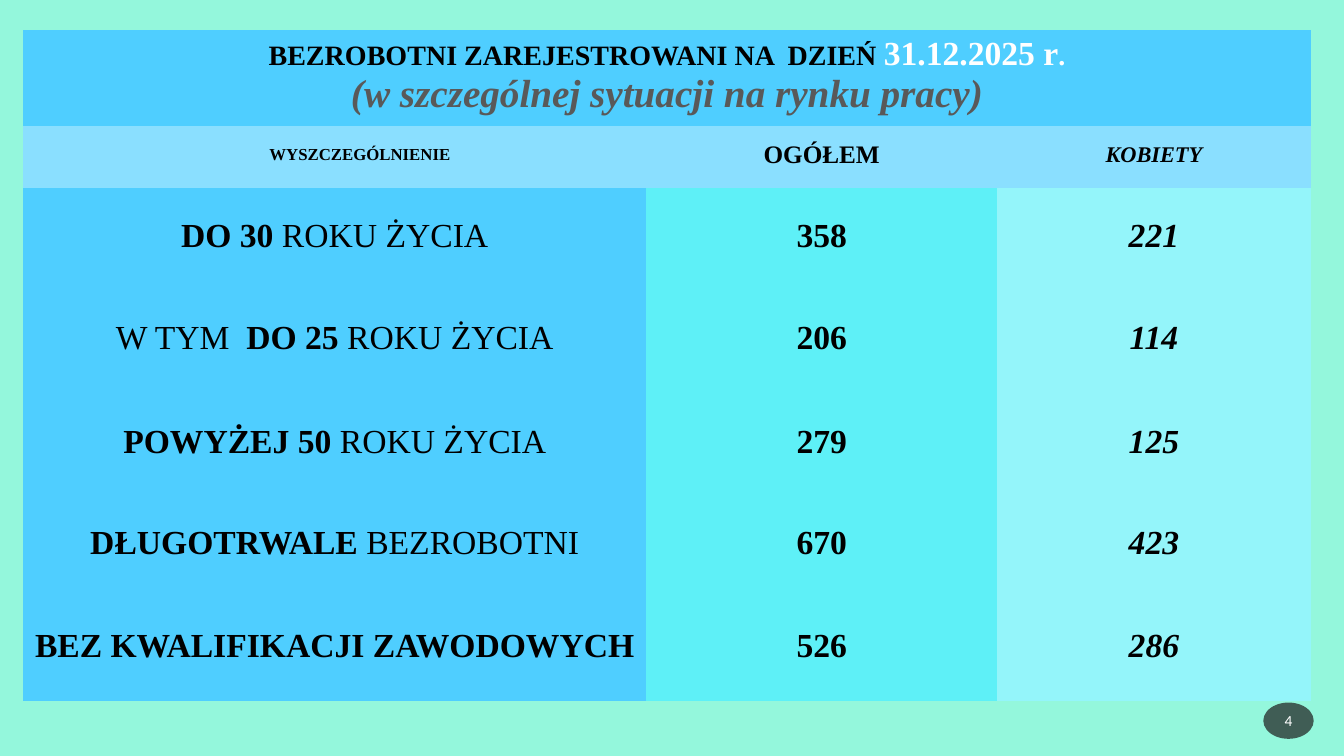
from pptx import Presentation
from pptx import util as u
from pptx.dml.color import RGBColor
from pptx.enum import shapes, text
from pptx.oxml import ns
from lxml import etree

COLORS = {
    "background": "94F7DC", "label": "4FCEFF", "header": "8ADFFF",
    "total": "5EF0F7", "women": "94F5FA", "badge": "1D1D1D",
    "black": "000000", "white": "FFFFFF", "grey": "595959",
}
NO_STYLE = "{2D5ABB26-0587-4C30-8999-92F81FD0307C}"
COLUMNS = [6.18, 3.48, 3.11]
ROWS = [0.95, 0.62, 0.98, 1.05, 1.01, 0.99, 1.06]
HEADING = [
    [("BEZROBOTNI ZAREJESTROWANI NA  DZIEŃ ", 20, True, False, "black"),
     ("31.12.2025 r", 24, True, False, "white"),
     (".", 20, True, False, "white")],
    [("(w szczególnej sytuacji na rynku pracy)", 28, True, True, "grey")],
]
HEADERS = [("WYSZCZEGÓLNIENIE", 12, False), ("OGÓŁEM", 18, False), ("KOBIETY", 16, True)]
GROUPS = [
    ([("DO 30 ", True), ("ROKU ŻYCIA", False)], 358, 221),
    ([("W TYM  ", False), ("DO 25 ", True), ("ROKU ŻYCIA", False)], 206, 114),
    ([("POWYŻEJ 50 ", True), ("ROKU ŻYCIA", False)], 279, 125),
    ([("DŁUGOTRWALE", True), (" BEZROBOTNI", False)], 670, 423),
    ([("BEZ KWALIFIKACJI ZAWODOWYCH", True)], 526, 286),
]


def color(name):
    """Return the named palette colour."""
    return RGBColor.from_string(COLORS[name])


def fill_cell(cell, fill, paragraphs):
    """Colour a cell and write centred paragraphs of (text, size, bold, italic, colour) runs."""
    cell.fill.solid()
    cell.fill.fore_color.rgb = color(fill)
    cell.vertical_anchor = text.MSO_ANCHOR.MIDDLE
    cell.margin_left = cell.margin_right = cell.margin_top = u.Inches(0.01)
    cell.margin_bottom = u.Inches(0.05)
    frame = cell.text_frame
    for index, runs in enumerate(paragraphs):
        paragraph = frame.add_paragraph() if index else frame.paragraphs[0]
        paragraph.alignment = text.PP_ALIGN.CENTER
        paragraph.font.name = "Times New Roman"
        for words, size, bold, italic, ink in runs:
            run = paragraph.add_run()
            run.text = words
            font = run.font
            font.name, font.size = "Times New Roman", u.Pt(size)
            font.bold, font.italic = bold, italic
            font.color.rgb = color(ink)


def add_unemployment_table(slide, left, top):
    """Place the table of registered unemployed with its corner at the given point."""
    table = slide.shapes.add_table(
        len(ROWS), len(COLUMNS), u.Inches(left), u.Inches(top),
        u.Inches(sum(COLUMNS)), u.Inches(sum(ROWS))).table
    table.first_row = table.horz_banding = False
    table._tbl.tblPr.find(ns.qn("a:tableStyleId")).text = NO_STYLE
    for column, width in zip(table.columns, COLUMNS):
        column.width = u.Inches(width)
    for row, height in zip(table.rows, ROWS):
        row.height = u.Inches(height)

    table.cell(0, 0).merge(table.cell(0, 2))
    fill_cell(table.cell(0, 0), "label", HEADING)
    for index, (words, size, italic) in enumerate(HEADERS):
        fill_cell(table.cell(1, index), "header", [[(words, size, True, italic, "black")]])
    indented = table.cell(1, 0).text_frame.paragraphs[0]
    indented.level = 1
    properties = indented._p.get_or_add_pPr()
    properties.set("marL", str(u.Inches(0.5)))
    properties.set("indent", "0")

    for row, (label, total, women) in enumerate(GROUPS, 2):
        label_runs = [(words, 24, bold, False, "black") for words, bold in label]
        fill_cell(table.cell(row, 0), "label", [label_runs])
        fill_cell(table.cell(row, 1), "total", [[(str(total), 24, True, False, "black")]])
        fill_cell(table.cell(row, 2), "women", [[(str(women), 24, True, True, "black")]])


def add_page_badge(slide, left, top, width, height, number):
    """Place the translucent oval with the page number in the given box."""
    badge = slide.shapes.add_shape(
        shapes.MSO_SHAPE.OVAL, *map(u.Inches, (left, top, width, height)))
    badge.shadow.inherit = False
    badge.line.fill.background()
    badge.fill.solid()
    badge.fill.fore_color.rgb = color("badge")
    srgb = badge.fill._xPr.find(".//" + ns.qn("a:srgbClr"))
    etree.SubElement(srgb, ns.qn("a:alpha"), val="70000")
    frame = badge.text_frame
    frame.margin_left = frame.margin_right = u.Inches(0.02)
    frame.vertical_anchor = text.MSO_ANCHOR.MIDDLE
    paragraph = frame.paragraphs[0]
    paragraph.text = str(number)
    paragraph.alignment = text.PP_ALIGN.CENTER
    paragraph.font.name, paragraph.font.size = "Calibri", u.Pt(11)
    paragraph.font.color.rgb = color("white")


def main():
    """Build and save the presentation."""
    presentation = Presentation()
    presentation.slide_width = u.Inches(13.33)
    presentation.slide_height = u.Inches(7.5)
    slide = presentation.slides.add_slide(presentation.slide_layouts[6])
    slide.background.fill.solid()
    slide.background.fill.fore_color.rgb = color("background")
    add_unemployment_table(slide, 0.23, 0.3)
    add_page_badge(slide, 12.53, 6.97, 0.5, 0.36, 4)
    presentation.save("out.pptx")


if __name__ == "__main__":
    main()
